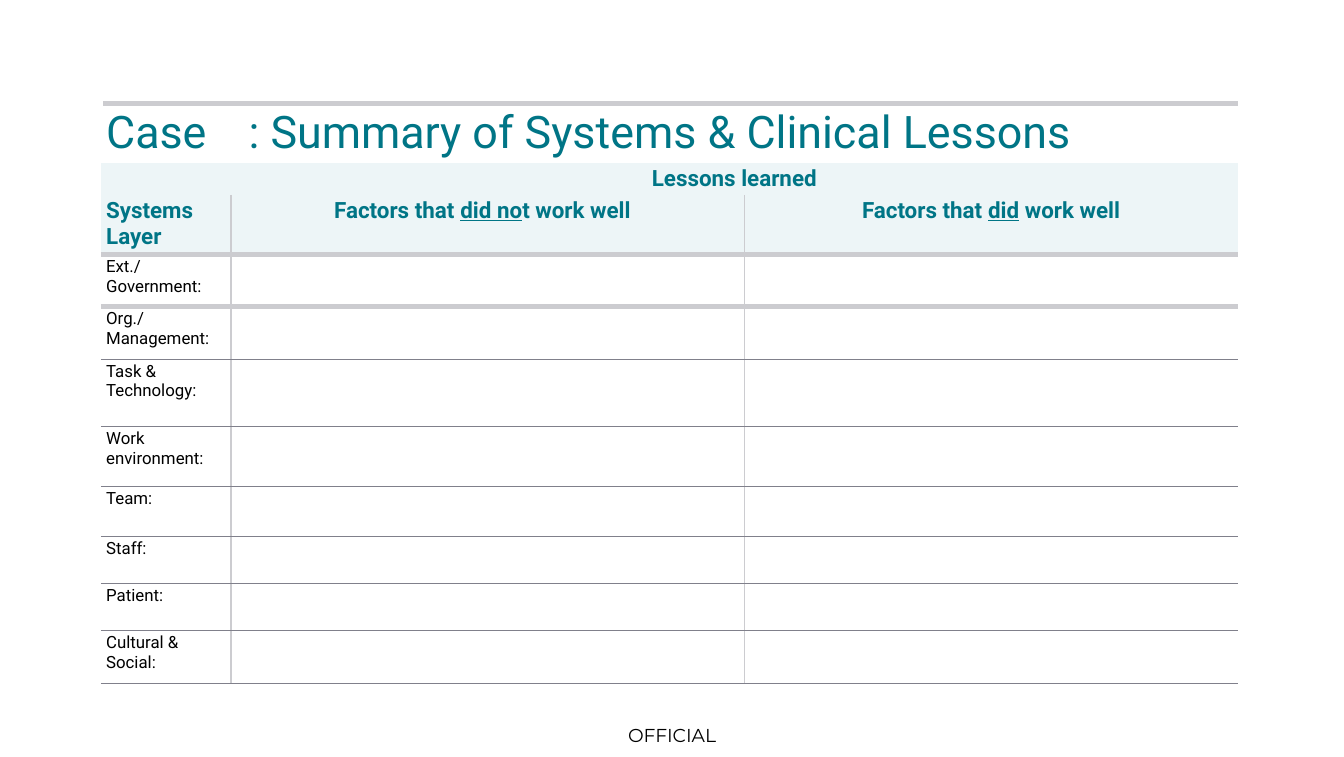
from lxml import etree
from pptx import Presentation
from pptx.dml.color import RGBColor
from pptx.enum.shapes import MSO_CONNECTOR
from pptx.enum.text import MSO_ANCHOR, PP_ALIGN
from pptx.oxml.ns import qn
from pptx.util import Inches, Pt

CENTER, LEFT = PP_ALIGN.CENTER, PP_ALIGN.LEFT
TEAL = RGBColor(0x00, 0x75, 0x86)
PALE = RGBColor(0xED, 0xF5, 0xF7)
LIGHT_GREY = RGBColor(0xCC, 0xCC, 0xD0)
GREY = RGBColor(0x80, 0x80, 0x8B)
BLACK = RGBColor(0, 0, 0)

TITLE = "Case\t: Summary of Systems & Clinical Lessons"
FOOTER = "OFFICIAL"
# Each cell is a list of (text, underlined) runs
HEADERS = [
    [[], [("Lessons learned", False)], []],
    [
        [("Systems Layer", False)],
        [("Factors that ", False), ("did no", True), ("t work well", False)],
        [("Factors that ", False), ("did", True), (" work well", False)],
    ],
]
LAYERS = [
    "Ext./ Government:", "Org./ Management:", "Task & Technology:",
    "Work environment:", "Team:", "Staff:", "Patient:", "Cultural & Social:",
]
COL_WIDTHS = [0.97, 3.82, 3.67]
ROW_HEIGHTS = [0.24, 0.43, 0.39, 0.39, 0.5, 0.45, 0.37, 0.35, 0.35, 0.39]

THICK, THIN, DIVIDER = (LIGHT_GREY, 3), (GREY, 0.25), (LIGHT_GREY, 1)
# Rule below each row; the first header row has none
RULES = [None, THICK, THICK] + [THIN] * (len(LAYERS) - 1)


def set_font(p, name, size, color, bold=False):
    p.font.name, p.font.size, p.font.bold = name, Pt(size), bold
    p.font.color.rgb = color


def add_text(s, box, text, anchor, margin):
    tf = s.shapes.add_textbox(*map(Inches, box)).text_frame
    tf.word_wrap = True
    tf.vertical_anchor = anchor
    tf.margin_left = tf.margin_right = Inches(margin)
    tf.margin_top = tf.margin_bottom = Inches(margin)
    p = tf.paragraphs[0]
    p.add_run().text = text
    return p


def set_border(cell, tag, rule):
    ln = etree.SubElement(cell._tc.get_or_add_tcPr(), qn(tag))
    if rule is None:
        etree.SubElement(ln, qn("a:noFill"))
        return
    color, width = rule
    ln.set("w", str(Pt(width)))
    fill = etree.SubElement(ln, qn("a:solidFill"))
    etree.SubElement(fill, qn("a:srgbClr")).set("val", str(color))


def fill_cell(cell, runs, header, align):
    cell.margin_left = cell.margin_right = Inches(0.04)
    cell.margin_top = cell.margin_bottom = Inches(0.02)
    p = cell.text_frame.paragraphs[0]
    p.alignment, p.space_after = align, Pt(8)
    set_font(p, "Roboto", 12 if header else 9, TEAL if header else BLACK, header)
    for text, underlined in runs:
        r = p.add_run()
        r.text = text
        if underlined:
            r.font.underline = True
    if header:
        cell.fill.solid()
        cell.fill.fore_color.rgb = PALE
    else:
        cell.fill.background()


def add_lessons_table(s):
    rows = HEADERS + [[[(layer, False)], [], []] for layer in LAYERS]
    table = s.shapes.add_table(
        len(rows), len(COL_WIDTHS), Inches(0.75), Inches(1.21),
        Inches(sum(COL_WIDTHS)), Inches(sum(ROW_HEIGHTS))).table
    table.first_row = table.horz_banding = False
    for column, width in zip(table.columns, COL_WIDTHS):
        column.width = Inches(width)
    for row, height in zip(table.rows, ROW_HEIGHTS):
        row.height = Inches(height)
    last = len(COL_WIDTHS) - 1
    for i, row in enumerate(rows):
        for j, runs in enumerate(row):
            cell = table.cell(i, j)
            set_border(cell, "a:lnL", DIVIDER if i and j else None)
            set_border(cell, "a:lnR", DIVIDER if i and j < last else None)
            set_border(cell, "a:lnT", RULES[i - 1] if i else None)
            set_border(cell, "a:lnB", RULES[i])
            fill_cell(cell, runs, i < len(HEADERS), CENTER if j else LEFT)
    table.cell(0, 1).merge(table.cell(0, 2))
    table.cell(1, 1).margin_right = Inches(0.12)


prs = Presentation()
prs.slide_width, prs.slide_height = Inches(10), Inches(5.63)
s = prs.slides.add_slide(prs.slide_layouts[6])

p = add_text(s, (4.49, 5.32, 1.02, 0.31), FOOTER, MSO_ANCHOR.MIDDLE, 0)
p.alignment, p.line_spacing = CENTER, 0.98
set_font(p, "Montserrat", 10, BLACK)

top_rule = s.shapes.add_connector(
    MSO_CONNECTOR.STRAIGHT, Inches(0.77), Inches(0.77), Inches(9.21), Inches(0.77))
top_rule.line.color.rgb, top_rule.line.width = LIGHT_GREY, Pt(3)
etree.SubElement(top_rule._element.spPr, qn("a:effectLst"))

p = add_text(s, (0.75, 0.76, 8.46, 0.45), TITLE, MSO_ANCHOR.TOP, 0.04)
p.line_spacing, p.space_after = 0.95, Pt(6)
tabs = etree.SubElement(p._p.get_or_add_pPr(), qn("a:tabLst"))
etree.SubElement(tabs, qn("a:tab"), pos=str(Inches(1.06)), algn="l")
set_font(p, "Roboto", 24, TEAL)

add_lessons_table(s)
prs.save("out.pptx")
